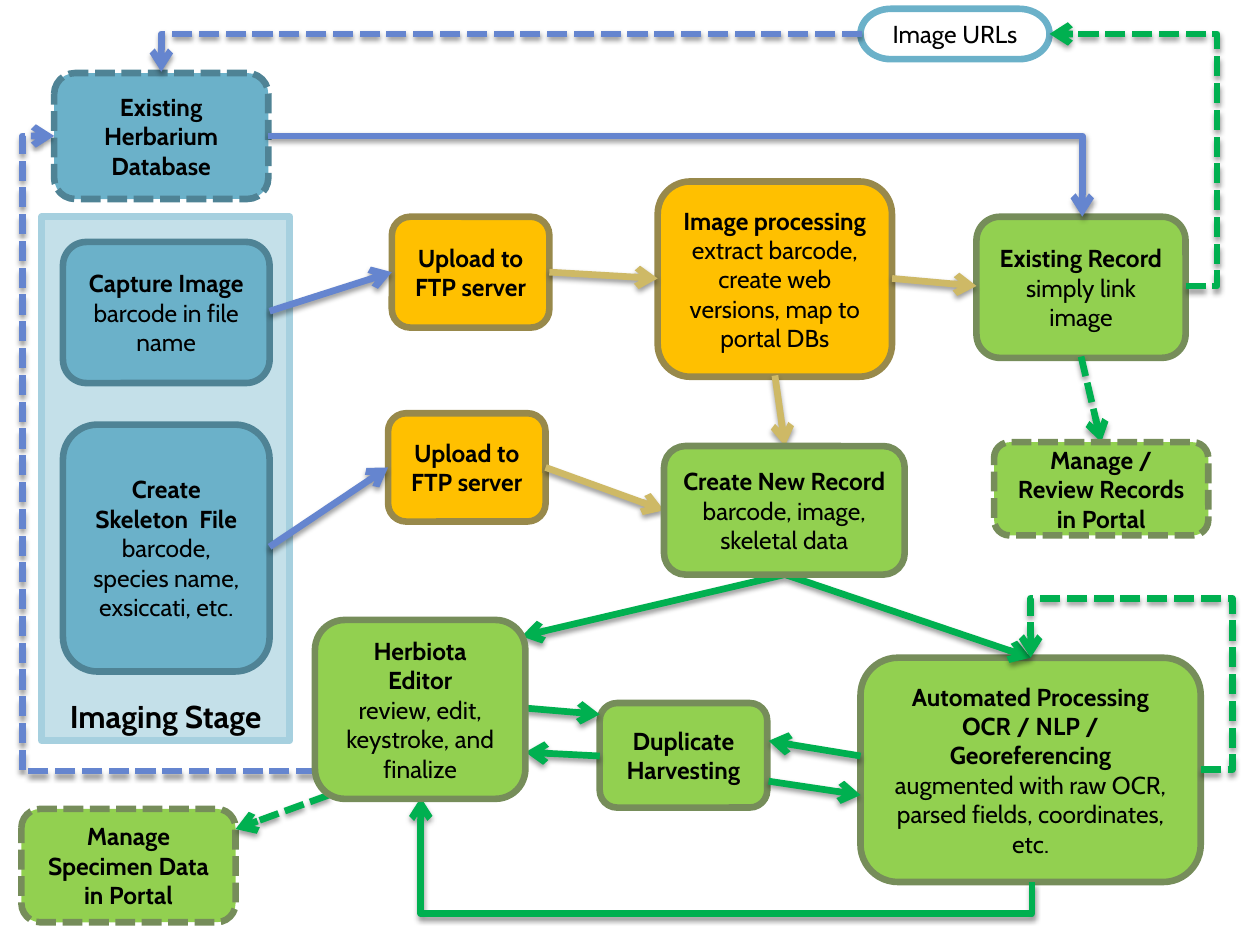
from lxml import etree
from pptx import Presentation
from pptx.dml.color import RGBColor
from pptx.enum.dml import MSO_LINE
from pptx.enum.shapes import MSO_CONNECTOR, MSO_SHAPE
from pptx.enum.text import MSO_ANCHOR, PP_ALIGN
from pptx.oxml.ns import qn
from pptx.util import Pt

PX = 9144
RECT = MSO_SHAPE.RECTANGLE
ROUND = MSO_SHAPE.ROUNDED_RECTANGLE
PILL = MSO_SHAPE.FLOWCHART_TERMINATOR
STRAIGHT, ELBOW = MSO_CONNECTOR.STRAIGHT, MSO_CONNECTOR.ELBOW
DASH = MSO_LINE.SQUARE_DOT
CENTER = PP_ALIGN.CENTER
MIDDLE, BOTTOM = MSO_ANCHOR.MIDDLE, MSO_ANCHOR.BOTTOM

BLACK = RGBColor(0x00, 0x00, 0x00)
WHITE = RGBColor(0xFF, 0xFF, 0xFF)
PALE = RGBColor(0xC4, 0xE0, 0xE9)
PALE_EDGE = RGBColor(0xA6, 0xD0, 0xDF)
TEAL = RGBColor(0x6B, 0xB1, 0xC9)
TEAL_EDGE = RGBColor(0x4F, 0x83, 0x95)
AMBER = RGBColor(0xFF, 0xC0, 0x00)
AMBER_EDGE = RGBColor(0x98, 0x89, 0x4B)
LIME = RGBColor(0x92, 0xD0, 0x50)
LIME_EDGE = RGBColor(0x76, 0x8D, 0x5A)
BLUE = RGBColor(0x65, 0x85, 0xCF)
GOLD = RGBColor(0xCE, 0xB9, 0x66)
GREEN = RGBColor(0x00, 0xB0, 0x50)

PANEL = (RECT, PALE, PALE_EDGE, False)
URLS = (PILL, WHITE, TEAL, False)
CAPTURE = (ROUND, TEAL, TEAL_EDGE, False)
DATABASE = (ROUND, TEAL, TEAL_EDGE, True)
SERVER = (ROUND, AMBER, AMBER_EDGE, False)
PORTAL = (ROUND, LIME, LIME_EDGE, False)
MANAGE = (ROUND, LIME, LIME_EDGE, True)

BACK_BOXES = [
    (33, 172, 197, 416, PANEL, ["Imaging Stage"], ""),
    (50, 192, 164, 112, CAPTURE, ["Capture Image"], "barcode in file name"),
    (50, 337, 164, 196, CAPTURE, ["Create Skeleton  File"],
     "barcode, species name, exsiccati, etc."),
    (311, 172, 125, 88, SERVER, ["Upload to FTP server"], ""),
    (308, 328, 125, 86, SERVER, ["Upload to FTP server"], ""),
    (522, 144, 186, 155, SERVER, ["Image processing"],
     " extract barcode, create web versions, map to portal DBs"),
    (476, 558, 133, 83, PORTAL, ["Duplicate Harvesting"], ""),
    (43, 58, 170, 100, DATABASE, ["Existing Herbarium Database"], ""),
    (683, 522, 270, 178, PORTAL,
     ["Automated Processing", "OCR / NLP / Georeferencing"],
     "augmented with raw OCR, parsed fields, coordinates, etc."),
    (775, 172, 166, 112, PORTAL, ["Existing Record"], "simply link image"),
    (683, 7, 150, 40, URLS, [], "Image URLs"),
    (17, 642, 170, 90, MANAGE, ["Manage Specimen Data in Portal"], ""),
]
FRONT_BOXES = [
    (789, 351, 170, 74, MANAGE, ["Manage / Review Records in Portal"], ""),
    (250, 492, 167, 142, PORTAL, ["Herbiota", "Editor"],
     "review, edit, keystroke, and finalize"),
    (527, 354, 191, 102, PORTAL, ["Create New Record"],
     " barcode, image, skeletal data"),
]
ARROWS = [
    (214, 434, 308, 371, BLUE, False),
    (214, 247, 311, 216, BLUE, False),
    (436, 216, 522, 221, GOLD, False),
    (615, 298, 623, 354, GOLD, False),
    (433, 371, 527, 405, GOLD, False),
    (708, 221, 775, 227, GOLD, False),
    (623, 456, 818, 522, GREEN, False),
    (623, 456, 414, 505, GREEN, False),
    (858, 283, 874, 351, GREEN, True),
    (261, 631, 187, 658, GREEN, True),
    (683, 600, 610, 588, GREEN, False),
    (476, 600, 417, 597, GREEN, False),
    (610, 620, 683, 631, GREEN, False),
    (417, 562, 476, 567, GREEN, False),
]
ELBOWS = [
    (-105, 256, 503, 207, 270, "V", 4, [-200, 112100], BLUE, True),
    (213, 108, 646, 64, 0, "", 2, [], BLUE, False),
    (833, 27, 108, 200, 0, "HV", 3, [-23100], GREEN, True),
    (128, 27, 556, 30, 180, "V", 2, [], BLUE, True),
    (543, 424, 67, 485, 90, "H", 3, [-37500], GREEN, False),
    (818, 522, 135, 89, 0, "HV", 4, [-18500, 152900], GREEN, True),
]

prs = Presentation()
prs.slide_width, prs.slide_height = 1000 * PX, 750 * PX
s = prs.slides.add_slide(prs.slide_layouts[6])


def add_box(x, y, w, h, style, heads, body):
    shape, fill, edge, dashed = style
    sp = s.shapes.add_shape(shape, x * PX, y * PX, w * PX, h * PX)
    sp.shadow.inherit = False
    sp.fill.solid()
    sp.fill.fore_color.rgb = fill
    sp.line.color.rgb = edge
    sp.line.width = Pt(3.78)
    if dashed:
        sp.line.dash_style = DASH
    tf = sp.text_frame
    tf.word_wrap = True
    tf.vertical_anchor = BOTTOM if style is PANEL else MIDDLE
    paras = [[(head, True)] for head in heads]
    if body.startswith(" "):
        paras[-1].append((body, False))
    elif body:
        paras.append([(body, False)])
    for i, runs in enumerate(paras):
        p = tf.add_paragraph() if i else tf.paragraphs[0]
        p.alignment = CENTER
        for text, bold in runs:
            r = p.add_run()
            r.text = text
            r.font.name = "Cabin"
            r.font.size = Pt(18 if style is PANEL else 14)
            r.font.bold = bold
            r.font.color.rgb = BLACK


def add_arrow(kind, x1, y1, x2, y2, color, dashed):
    cx = s.shapes.add_connector(kind, x1 * PX, y1 * PX, x2 * PX, y2 * PX)
    cx.line.color.rgb = color
    cx.line.width = Pt(3.82)
    if dashed:
        cx.line.dash_style = DASH
    pr = cx._element.spPr
    etree.SubElement(pr.find(qn("a:ln")), qn("a:tailEnd"), type="arrow")
    effects = etree.SubElement(pr, qn("a:effectLst"))
    shadow = etree.SubElement(effects, qn("a:outerShdw"), blurRad=str(Pt(3.1)),
                              dist=str(Pt(2)), dir="5400000", rotWithShape="0")
    tint = etree.SubElement(shadow, qn("a:srgbClr"), val="000000")
    etree.SubElement(tint, qn("a:alpha"), val="38000")
    return pr


for box in BACK_BOXES:
    add_box(*box)

for x1, y1, x2, y2, color, dashed in ARROWS:
    add_arrow(STRAIGHT, x1, y1, x2, y2, color, dashed)

for x, y, w, h, angle, flips, bends, adjusts, color, dashed in ELBOWS:
    pr = add_arrow(ELBOW, x, y, x + w, y + h, color, dashed)
    xfrm = pr.find(qn("a:xfrm"))
    xfrm.set("rot", str(angle * 60000))
    for axis in flips:
        xfrm.set("flip" + axis, "1")
    geom = pr.find(qn("a:prstGeom"))
    geom.set("prst", f"bentConnector{bends}")
    guides = geom.find(qn("a:avLst"))
    for n, value in enumerate(adjusts, 1):
        etree.SubElement(guides, qn("a:gd"), name=f"adj{n}", fmla=f"val {value}")

for box in FRONT_BOXES:
    add_box(*box)

prs.save("out.pptx")
